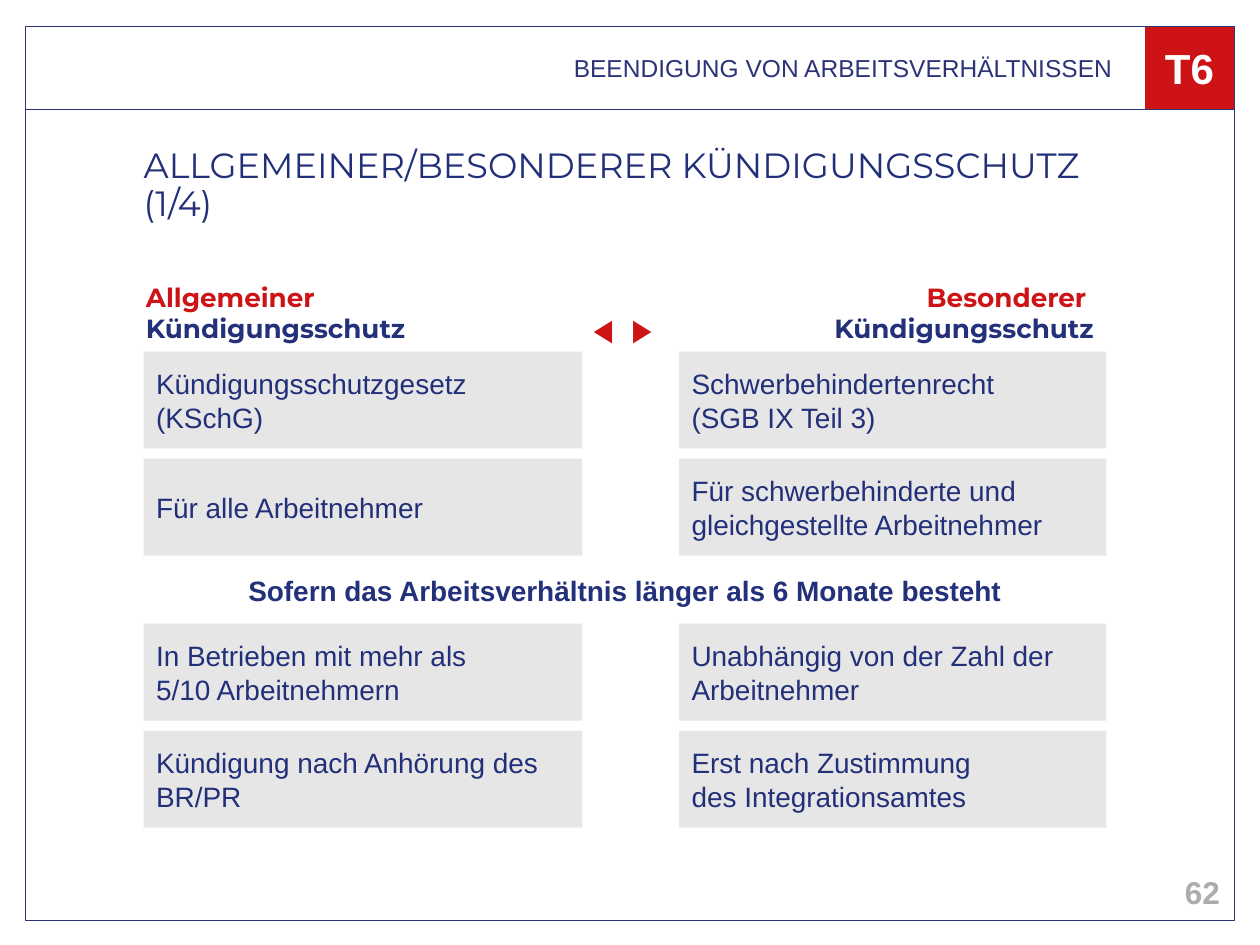
from copy import deepcopy

from lxml.etree import SubElement
from pptx import Presentation
from pptx.dml.color import RGBColor
from pptx.enum.shapes import MSO_SHAPE
from pptx.enum.text import MSO_ANCHOR, MSO_AUTO_SIZE, PP_ALIGN
from pptx.oxml.ns import qn
from pptx.util import Inches, Pt

COLORS = {
    "red": "CD1316",
    "frame": "2C3477",
    "navy": "222F79",
    "heading": "23307A",
    "tile": "E7E6E6",
    "gray": "ACACAC",
    "white": "FFFFFF",
}
HEADER_BOX = (0.2, 0.21, 9.6, 0.66)
FRAME_BOX = (0.2, 0.21, 9.6, 7.09)
BADGE_BOX = (9.09, 0.21, 0.7, 0.66)
DEFAULT_INSETS = (0.1, 0.05, 0.1, 0.05)
NO_INSETS = (0, 0, 0, 0)

TILE_TOP, TILE_HEIGHT = 2.79, 0.77
ROW_PITCH, GROUP_PITCH = 0.85, 2.16
# left edge, width and texts of each column; \v breaks a line, \n a paragraph
COLUMNS = (
    (1.14, 3.48, (
        "Kündigungsschutzgesetz\n(KSchG)",
        "Für alle Arbeitnehmer",
        "In Betrieben mit mehr als\v5/10 Arbeitnehmern",
        "Kündigung nach Anhörung des BR/PR",
    )),
    (5.39, 3.39, (
        "Schwerbehindertenrecht\n(SGB IX Teil 3)",
        "Für schwerbehinderte und gleichgestellte Arbeitnehmer",
        "Unabhängig von der Zahl der Arbeitnehmer",
        "Erst nach Zustimmung\vdes Integrationsamtes",
    )),
)


def rgb(name):
    return RGBColor.from_string(COLORS[name])


def set_attributes(target, values):
    for name, value in values.items():
        setattr(target, name, value)


def place(shape, box):
    names = ("left", "top", "width", "height")
    set_attributes(shape, dict(zip(names, map(Inches, box))))


def write_text(shape, text, colors, size, font="Arial", bold=False,
               align=PP_ALIGN.LEFT, anchor=MSO_ANCHOR.TOP,
               insets=DEFAULT_INSETS, line_spacing=1.0, space_after=0):
    """Fill a shape with text; colors gives one colour per line of a paragraph."""
    frame = shape.text_frame
    frame.text = text
    margins = ("margin_left", "margin_top", "margin_right", "margin_bottom")
    set_attributes(frame, {
        "word_wrap": True,
        "auto_size": MSO_AUTO_SIZE.NONE,
        "vertical_anchor": anchor,
        **dict(zip(margins, map(Inches, insets))),
    })
    for paragraph in frame.paragraphs:
        set_attributes(paragraph, {
            "alignment": align,
            "line_spacing": line_spacing,
            "space_before": Pt(0),
            "space_after": Pt(space_after),
        })
        for index, run in enumerate(paragraph.runs):
            set_attributes(run.font, {"name": font, "size": Pt(size), "bold": bold})
            run.font.color.rgb = rgb(colors[min(index, len(colors) - 1)])
        for line_break in paragraph._p.findall(qn("a:br")):
            line_break.append(deepcopy(paragraph.runs[0]._r.rPr))


def add_rectangle(slide, box, fill=None, line=None):
    shape = slide.shapes.add_shape(MSO_SHAPE.RECTANGLE, *map(Inches, box))
    shape.shadow.inherit = False
    if fill:
        shape.fill.solid()
        shape.fill.fore_color.rgb = rgb(fill)
    else:
        shape.fill.background()
    if line:
        shape.line.color.rgb = rgb(line)
        shape.line.width = Pt(0.25)
    else:
        shape.line.fill.background()
    return shape


def add_label(slide, box, text, colors, size, **text_format):
    label = slide.shapes.add_textbox(*map(Inches, box))
    write_text(label, text, colors, size, **text_format)
    return label


def fill_placeholder(placeholder, box, text, color, size, **text_format):
    place(placeholder, box)
    write_text(placeholder, text, (color,), size, **text_format)


def remove_bullets(placeholder):
    for paragraph in placeholder.text_frame.paragraphs:
        properties = paragraph._p.get_or_add_pPr()
        properties.set("marL", "0")
        properties.set("indent", "0")
        SubElement(properties, qn("a:buNone"))


def add_frame(slide):
    add_rectangle(slide, BADGE_BOX, "red", "red")
    for box in (HEADER_BOX, FRAME_BOX):
        add_rectangle(slide, box, line="frame")
    add_label(slide, (7.53, 6.88, 2.25, 0.4), "62", ("gray",), 18, bold=True,
              align=PP_ALIGN.RIGHT, anchor=MSO_ANCHOR.MIDDLE)


def fill_header(slide):
    title, section, badge = slide.placeholders
    fill_placeholder(title, (1.14, 1.18, 7.63, 0.66),
                     "ALLGEMEINER/BESONDERER KÜNDIGUNGSSCHUTZ (1/4)", "navy", 20,
                     font="Montserrat", insets=NO_INSETS, line_spacing=0.9)
    fill_placeholder(section, (0.2, 0.21, 8.89, 0.66),
                     "BEENDIGUNG VON ARBEITSVERHÄLTNISSEN", "frame", 14,
                     align=PP_ALIGN.RIGHT, anchor=MSO_ANCHOR.MIDDLE,
                     insets=(0, 0, 0.26, 0))
    fill_placeholder(badge, BADGE_BOX, "T6", "white", 24, bold=True,
                     align=PP_ALIGN.CENTER, anchor=MSO_ANCHOR.MIDDLE,
                     insets=NO_INSETS)
    for placeholder in (section, badge):
        remove_bullets(placeholder)
    # bring the placeholders in front of the frame
    for placeholder in (title, section, badge):
        slide.shapes._spTree.append(placeholder._element)


def add_tiles(slide):
    for left, width, texts in COLUMNS:
        for row, text in enumerate(texts):
            group, row_in_group = divmod(row, 2)
            top = TILE_TOP + group * GROUP_PITCH + row_in_group * ROW_PITCH
            tile = add_rectangle(slide, (left, top, width, TILE_HEIGHT), "tile")
            write_text(tile, text, ("navy",), 16, anchor=MSO_ANCHOR.MIDDLE)


def add_headings(slide):
    headings = (
        ("Allgemeiner", (1.06, 2.18, 2.68, 0.79), PP_ALIGN.LEFT),
        ("Besonderer", (5.32, 2.18, 3.46, 0.79), PP_ALIGN.RIGHT),
    )
    for kind, box, align in headings:
        add_label(slide, box, f"{kind} \vKündigungsschutz", ("red", "heading"), 15,
                  font="Montserrat", bold=True, align=align, space_after=6)
    arrows = add_label(slide, (4.61, 2.41, 0.79, 0.4), "◀ ▶", ("red",), 18,
                       bold=True, space_after=6)
    arrows.text_frame.paragraphs[0].runs[0]._r.rPr.set("spc", "250")
    add_label(slide, (1.14, 4.5, 7.64, 0.37),
              "Sofern das Arbeitsverhältnis länger als 6 Monate besteht",
              ("heading",), 16, bold=True, align=PP_ALIGN.CENTER,
              anchor=MSO_ANCHOR.MIDDLE, space_after=2)


def main():
    presentation = Presentation()
    set_attributes(presentation, {"slide_width": Inches(10), "slide_height": Inches(7.5)})
    two_content_layout = presentation.slide_layouts[3]
    slide = presentation.slides.add_slide(two_content_layout)
    add_frame(slide)
    fill_header(slide)
    add_tiles(slide)
    add_headings(slide)
    presentation.save("out.pptx")


if __name__ == "__main__":
    main()
